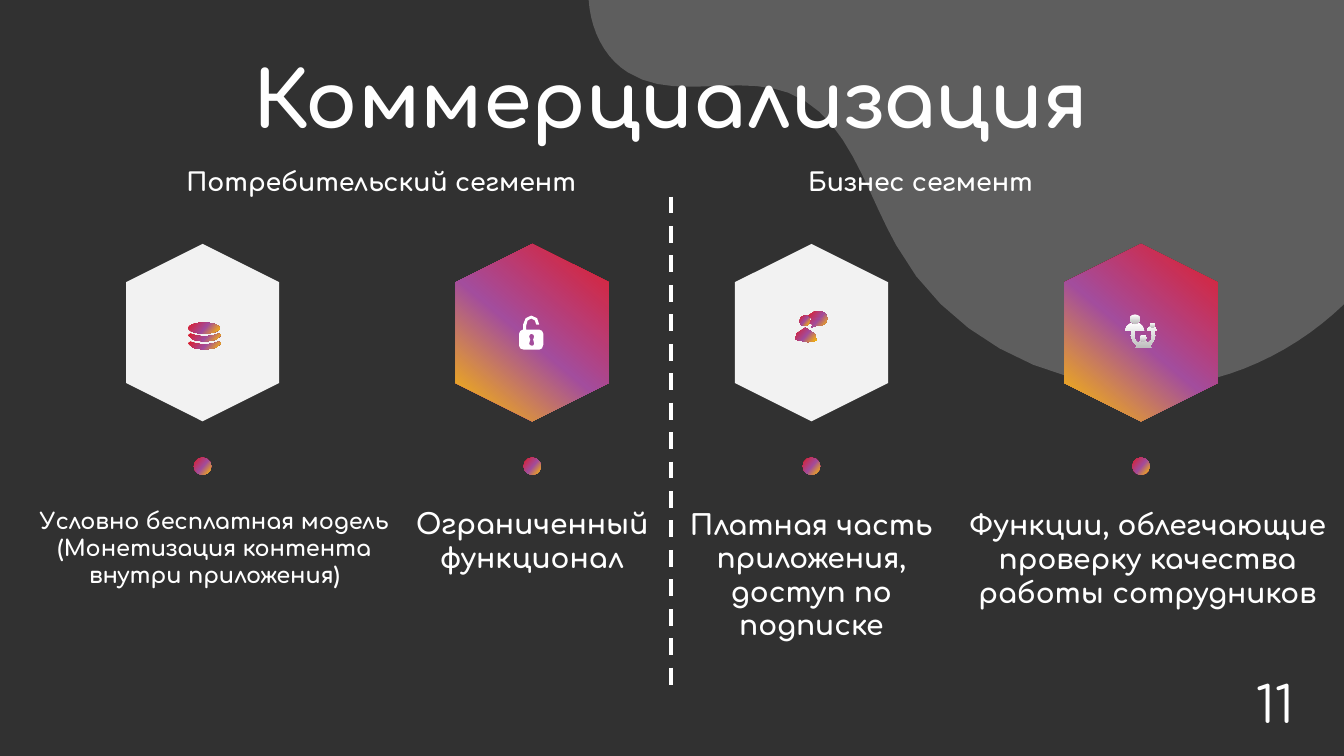
from lxml import etree
from pptx import Presentation
from pptx.dml.color import RGBColor
from pptx.enum import dml, shapes, text
from pptx.oxml import ns
from pptx.util import Pt

# Theme: solid paints are (colour, opacity %), gradients are (stops, angle)
SUNSET = ([(0, "DF1E2C"), (53, "A34D9D"), (100, "FFC000")], 40)
SILVER = ([(0, "FFFFFF"), (100, "BEBEBE")], 90)
THEME = dict(font="Comfortaa", back="313131", ink="FFFFFF", wave=("FEFEFE", 22),
             pale=("F2F2F2", 100), white=("FFFFFF", 100),
             title=55.5, heading=18, caption=20, small=16, number=36)

# Content: left, top, width, height of each text in points
TITLE = ("Коммерциализация", (159.8, 31, 639.4, 85))
HEADINGS = [("Потребительский сегмент", (126, 111.6, 327.6, 36)),
            ("Бизнес сегмент", (570.2, 111.6, 240.5, 36))]
NUMBER = ("11", (883.4, 473.8, 54, 58.3))
DIVIDER = (479.5, 140.4, 493.9)

# Outlines: pairs are straight steps, six numbers are a curve
WAVE = [[(420.5, 0), (421.9, 20.9, 431.3, 41, 448.6, 51.8),
         (481.7, 72.7, 526.3, 52.6, 563, 66.2), (605.5, 82.1, 617.8, 135.4, 640.1, 175),
         (682.6, 253.4, 782.6, 293, 868.3, 270), (902.9, 260.6, 934.6, 241.9, 960, 217.4),
         (960, 0)]]


def coin_edge(dy):
    edge = [(11.5, 6.5), (9.4, 7.2, 5.8, 8.6, 1.4, 8.6), (-2.9, 8.6, -7.2, 7.2, -8.6, 6.5),
            (-9.4, 6.5, -10.1, 7.2, -10.1, 7.9), (-10.1, 10.1, -5, 12.2, 1.4, 12.2),
            (7.2, 12.2, 13, 10.1, 13, 7.9), (13, 7.2, 12.2, 6.5, 11.5, 6.5)]
    return [[tuple(v + dy * (i % 2) for i, v in enumerate(step)) for step in edge]]


def slit(top):
    return [(1.4, top), (8.6, top), (8.6, top + 0.8), (1.4, top + 0.8)]


LOCK = [[(5, -2.2), (-4.3, -2.2), (-4.3, -5), (-4.3, -7.9, -2.9, -10.1, -0.7, -10.1),
         (1.4, -10.1, 2.9, -7.9, 2.9, -5.8), (5, -5.8), (5, -9.4, 2.9, -12.2, -0.7, -12.2),
         (-3.6, -12.2, -6.5, -9.4, -6.5, -5.8), (-6.5, -2.2),
         (-7.9, -2.2, -9.4, -0.7, -9.4, 0.7), (-9.4, 9.4),
         (-9.4, 10.8, -7.9, 12.2, -5.8, 12.2), (5, 12.2), (6.5, 12.2, 7.9, 10.8, 7.9, 8.6),
         (7.9, 0.7), (7.9, -0.7, 6.5, -2.2, 5, -2.2)],
        [(0.7, 5), (1.4, 7.9), (1.4, 8.6, 0.7, 9.4, 0, 9.4), (-1.4, 9.4, -2.2, 8.6, -2.2, 7.9),
         (-1.4, 5), (-2.2, 2.9), (-2.2, 2.2, -1.4, 0.7, -0.7, 0.7),
         (0.7, 0.7, 1.4, 2.2, 1.4, 2.9)]]
SPEAKER_BODY = [[(-4.3, -3.6), (-11.5, -3.6, -11.5, 5, -11.5, 5),
                 (-7.2, 8.6, 3.6, 5.8, 3.6, 5.8), (3.6, 5.8, 3.6, -3.6, -4.3, -3.6)]]
SPEAKER_HEAD = [[(-2.2, -11.5), (-2.9, -12.2, -3.6, -12.2, -5, -12.2),
                 (-7.2, -12.2, -8.6, -10.1, -8.6, -7.9), (-8.6, -5.8, -6.5, -4.3, -4.3, -5),
                 (-2.9, -5, -1.4, -5.8, -1.4, -7.2), (0, -9.4, -2.2, -11.5, -2.2, -11.5)]]
BUBBLE = [[(7.2, -15.1), (2.2, -15.1), (-2.2, -12.2), (0, -10.1), (-0.7, -6.5),
           (1.4, -5.8), (0, -3.6), (3.6, -5), (7.2, -5),
           (9.4, -5, 11.5, -7.2, 11.5, -10.1), (11.5, -13, 9.4, -15.1, 7.2, -15.1)],
          slit(-9.4), slit(-11.5)]
TEAM = [[(11.5, -1.4), (11.5, -2.9, 10.8, -3.6, 9.4, -4.3), (7.9, -3.6), (6.5, -4.3),
         (5, -3.6, 4.3, -2.9, 4.3, -1.4), (7.2, -1.4), (7.9, 2.2),
         (7.9, 4.3, 7.2, 6.5, 5, 7.2), (3.6, 6.5), (1.4, 7.2), (-0.7, 6.5), (-2.2, 7.2),
         (-3.6, 6.5, -5, 4.3, -5, 2.2), (-4.3, -1.4), (2.2, -1.4),
         (2.2, -3.6, 0.7, -5.8, -1.4, -7.2), (-2.2, -6.5, -2.9, -5.8, -4.3, -5.8),
         (-5.8, -5.8, -7.2, -6.5, -7.2, -7.2), (-9.4, -5.8, -11.5, -3.6, -11.5, -1.4),
         (-6.5, -1.4), (-7.2, 2.2), (-7.2, 5, -5, 7.2, -2.9, 9.4), (-3.6, 10.8),
         (7.2, 10.8), (6.5, 9.4), (8.6, 7.2, 10.1, 5, 10.1, 2.2), (9.4, -1.4)]]

# Columns: hexagon centre and paint, icon parts (tuple = ellipse) and paint, caption
COLUMNS = [
    (144.7, THEME["pale"], [coin_edge(0), coin_edge(-5.8), (-10.1, -7.2, 22.3, 7.9)], SUNSET,
     "Условно бесплатная модель (Монетизация контента внутри приложения)",
     "small", (12.2, 358.6, 282.2, 77)),
    (380.2, SUNSET, [LOCK], THEME["white"],
     "Ограниченный функционал", "caption", (270.7, 358.6, 218.9, 54.7)),
    (579.6, THEME["pale"], [SPEAKER_BODY, SPEAKER_HEAD, BUBBLE], SUNSET,
     "Платная часть приложения, доступ по подписке", "caption", (470.2, 358.6, 218.9, 43.9)),
    (815, SUNSET, [(-0.7, 1.4, 5, 5), TEAM, (6.5, -7.2, 3.6, 3.6), (-7.9, -13, 7.2, 6.5)],
     SILVER, "Функции, облегчающие проверку качества работы сотрудников",
     "caption", (669.6, 359.3, 300.2, 70.6)),
]
HEX_Y, HEX_W, HEX_H = 237.6, 126.7, 109.4
DOT_Y, DOT = 333, 12.4

deck = Presentation()
deck.slide_width, deck.slide_height = Pt(960), Pt(540)
slide = deck.slides.add_slide(deck.slide_layouts[6])
slide.background.fill.solid()
slide.background.fill.fore_color.rgb = RGBColor.from_string(THEME["back"])


def child(parent, tag, **attributes):
    return etree.SubElement(parent, ns.qn(tag), {k: str(v) for k, v in attributes.items()})


def paint(shape, style):
    shape.shadow.inherit = False
    shape.line.fill.background()
    if isinstance(style[0], str):
        shape.fill.solid()
        shape.fill.fore_color.rgb = RGBColor.from_string(style[0])
        if style[1] < 100:
            colour = shape.fill._xPr.find(".//" + ns.qn("a:srgbClr"))
            child(colour, "a:alpha", val=style[1] * 1000)
        return
    shape.fill.gradient()
    grad = shape.fill._xPr.find(ns.qn("a:gradFill"))
    for old in list(grad):
        grad.remove(old)
    stops = child(grad, "a:gsLst")
    for position, colour in style[0]:
        child(child(stops, "a:gs", pos=position * 1000), "a:srgbClr", val=colour)
    child(grad, "a:lin", ang=style[1] * 60000, scaled=0)


def preset(canvas, kind, box, style):
    shape = canvas.add_shape(kind, *map(Pt, box))
    paint(shape, style)
    return shape


def flatten(outline, dx, dy, steps):
    """Turn curves into short straight steps."""
    points = [outline[0]]
    for step in outline[1:]:
        if len(step) == 2:
            points.append(step)
            continue
        knots = [points[-1], step[:2], step[2:4], step[4:]]
        for t in (i / steps for i in range(1, steps + 1)):
            weights = ((1 - t) ** 3, 3 * t * (1 - t) ** 2, 3 * t * t * (1 - t), t ** 3)
            points.append(tuple(sum(w * k[axis] for w, k in zip(weights, knots))
                                for axis in (0, 1)))
    return [(Pt(x + dx), Pt(y + dy)) for x, y in points]


def outline_shape(canvas, outlines, style, dx=0, dy=0, steps=2):
    first, *others = [flatten(outline, dx, dy, steps) for outline in outlines]
    builder = canvas.build_freeform(*first[0])
    builder.add_line_segments(first[1:])
    for points in others:
        builder.move_to(*points[0])
        builder.add_line_segments(points[1:])
    paint(builder.convert_to_shape(), style)


def write(words, box, size, bold=True, align=text.PP_ALIGN.CENTER,
          anchor=text.MSO_ANCHOR.TOP, pad=3.6, spacing=None):
    frame = slide.shapes.add_textbox(*map(Pt, box)).text_frame
    frame.word_wrap, frame.vertical_anchor = True, anchor
    frame.margin_left = frame.margin_right = Pt(7.2)
    frame.margin_top = frame.margin_bottom = Pt(pad)
    line = frame.paragraphs[0]
    line.alignment, line.line_spacing = align, spacing
    run = line.add_run()
    run.text = words
    run.font.name, run.font.size, run.font.bold = THEME["font"], Pt(THEME[size]), bold
    run.font.color.rgb = RGBColor.from_string(THEME["ink"])


# Backdrop and title
outline_shape(slide.shapes, WAVE, THEME["wave"], steps=10)
write(*TITLE, "title", anchor=text.MSO_ANCHOR.MIDDLE, spacing=0.9)

# Columns
for centre, hex_paint, parts, icon_paint, caption, size, box in COLUMNS:
    hexagon = preset(slide.shapes, shapes.MSO_SHAPE.HEXAGON,
                     (centre - HEX_W / 2, HEX_Y - HEX_H / 2, HEX_W, HEX_H), hex_paint)
    hexagon.rotation = 90
    hexagon.adjustments[0] = 0.25
    canvas = slide.shapes.add_group_shape().shapes if len(parts) > 1 else slide.shapes
    for part in parts:
        if isinstance(part, tuple):
            x, y, width, height = part
            preset(canvas, shapes.MSO_SHAPE.OVAL, (centre + x, HEX_Y + y, width, height),
                   icon_paint)
        else:
            outline_shape(canvas, part, icon_paint, centre, HEX_Y)
    preset(slide.shapes, shapes.MSO_SHAPE.OVAL,
           (centre - DOT / 2, DOT_Y - DOT / 2, DOT, DOT), SUNSET)
    write(caption, box, size)

# Divider between the segments
x, top, bottom = map(Pt, DIVIDER)
divider = slide.shapes.add_connector(shapes.MSO_CONNECTOR.STRAIGHT, x, top, x, bottom)
divider.line.color.rgb = RGBColor.from_string(THEME["ink"])
divider.line.width = Pt(3)
divider.line.dash_style = dml.MSO_LINE.DASH
child(divider._element.spPr, "a:effectLst")

# Segment headings and slide number
for words, box in HEADINGS:
    write(words, box, "heading", align=text.PP_ALIGN.LEFT, pad=7.2)
write(*NUMBER, "number", bold=False, pad=7.2)

deck.save("out.pptx")
